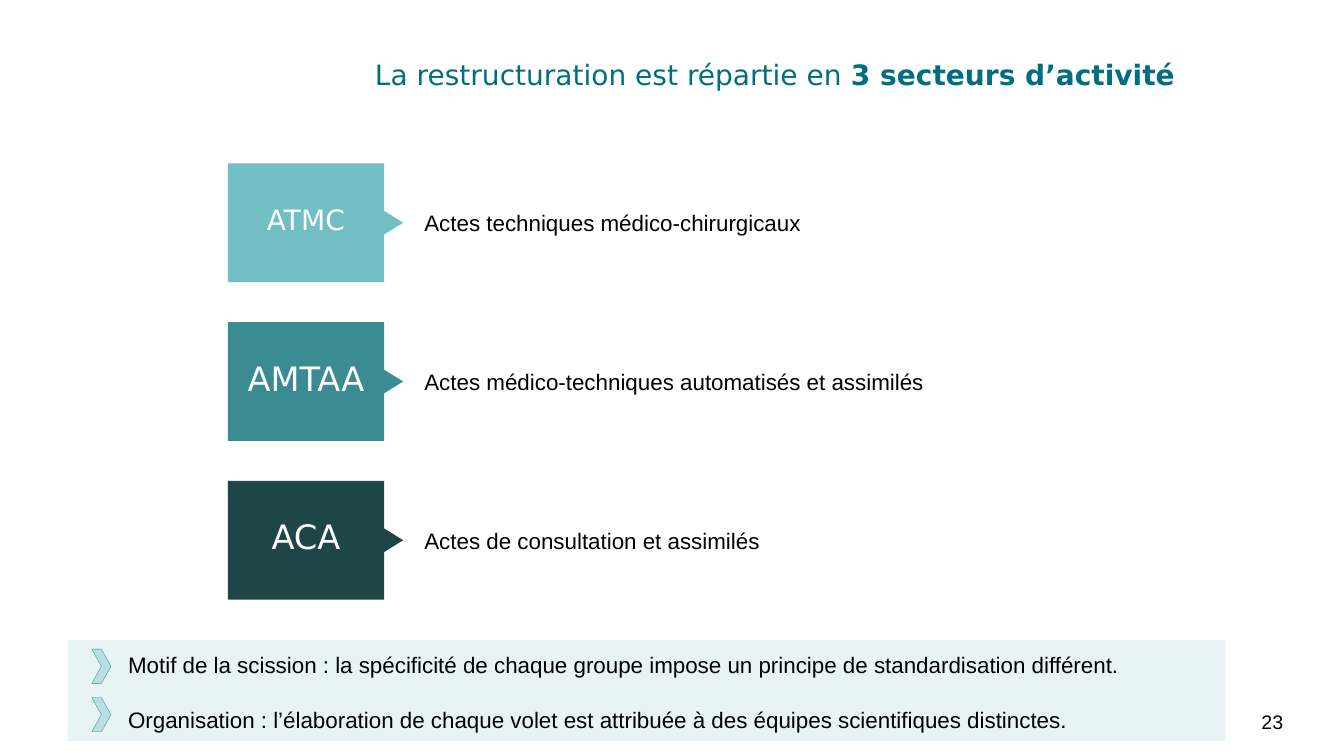
from pptx import Presentation
from pptx.dml.color import RGBColor
from pptx.enum.shapes import MSO_SHAPE
from pptx.enum.text import MSO_ANCHOR, PP_ALIGN
from pptx.util import Inches, Pt

TITLE_TEAL = RGBColor(0x00, 0x6E, 0x82)
LIGHT_TEAL = RGBColor(0x71, 0xBE, 0xC5)
MID_TEAL = RGBColor(0x3B, 0x8B, 0x92)
DARK_TEAL = RGBColor(0x1E, 0x46, 0x48)
PALE_TEAL = RGBColor(0xE7, 0xF3, 0xF4)
CHEVRON_TEAL = RGBColor(0xBA, 0xDF, 0xE2)
BLACK = RGBColor(0x00, 0x00, 0x00)
WHITE = RGBColor(0xFF, 0xFF, 0xFF)

deck = Presentation()
deck.slide_width, deck.slide_height = Inches(13.33), Inches(7.5)
COL, ROW = deck.slide_width / 100, deck.slide_height / 100
slide = deck.slides.add_slide(deck.slide_layouts[6])
shapes = slide.shapes


def block(left, top, width, height, fill=None, preset=MSO_SHAPE.RECTANGLE):
    box = [int(left * COL), int(top * ROW), int(width * COL), int(height * ROW)]
    if fill is None:
        return shapes.add_textbox(*box)
    shape = shapes.add_shape(preset, *box)
    shape.shadow.inherit = False
    shape.fill.solid()
    shape.fill.fore_color.rgb = fill
    shape.line.fill.background()
    return shape


def write(shape, paragraphs, face, size, color, align=PP_ALIGN.LEFT, gap=0, **frame_format):
    frame = shape.text_frame
    layout = dict(word_wrap=True, vertical_anchor=MSO_ANCHOR.MIDDLE, margin_left=0,
                  margin_right=0, margin_top=0, margin_bottom=0)
    for attribute, value in {**layout, **frame_format}.items():
        setattr(frame, attribute, value)
    for index, runs in enumerate(paragraphs):
        paragraph = frame.add_paragraph() if index else frame.paragraphs[0]
        paragraph.alignment = align
        if index:
            paragraph.space_before = Pt(gap)
        for text, bold in runs:
            run = paragraph.add_run()
            run.text = text
            for attribute, value in dict(name=face, size=Pt(size), bold=bold).items():
                setattr(run.font, attribute, value)
            run.font.color.rgb = color


heading = [("La restructuration est répartie en ", False), ("3 secteurs d’activité", True)]
write(block(27.9, 4.8, 64, 10.13), [heading], "DejaVu Sans", 20, TITLE_TEAL)

sectors = [
    ("ATMC", 20, LIGHT_TEAL, "Actes techniques médico-chirurgicaux"),
    ("AMTAA", 24, MID_TEAL, "Actes médico-techniques automatisés et assimilés"),
    ("ACA", 24, DARK_TEAL, "Actes de consultation et assimilés"),
]
TILE_HEIGHT = 15.73
for index, (code, size, color, meaning) in enumerate(sectors):
    top = 21.6 + 21 * index
    middle = top + TILE_HEIGHT / 2
    tile = block(16.95, top, 11.63, TILE_HEIGHT, color)
    write(tile, [[(code, False)]], "DejaVu Sans", size, WHITE, PP_ALIGN.CENTER,
          margin_bottom=int(ROW))

    corners = [(28.36, middle - 1.8), (30, middle), (28.36, middle + 1.8)]
    points = [(int(x * COL), int(y * ROW)) for x, y in corners]
    outline = shapes.build_freeform(*points[0])
    outline.add_line_segments(points[1:], close=True)
    pointer = outline.convert_to_shape()
    pointer.shadow.inherit = False
    pointer.fill.solid()
    pointer.fill.fore_color.rgb = color
    pointer.line.fill.background()

    write(block(31.58, middle - 2, 45, 4), [[(meaning, False)]], "Arial", 16, BLACK)

notes = [
    "Motif de la scission : la spécificité de chaque groupe impose un principe de "
    "standardisation différent.",
    "Organisation : l’élaboration de chaque volet est attribuée à des équipes "
    "scientifiques distinctes.",
]
band = block(5.03, 84.67, 86.12, 13.33, PALE_TEAL)
write(band, [[(note, False)] for note in notes], "Arial", 16, BLACK, gap=20,
      vertical_anchor=MSO_ANCHOR.TOP, margin_left=int(4.5 * COL), margin_top=int(1.5 * ROW))

for index in range(len(notes)):
    chevron = block(6.83, 85.87 + 6.4 * index, 1.43, 4.53, CHEVRON_TEAL, MSO_SHAPE.CHEVRON)
    chevron.line.color.rgb = MID_TEAL
    chevron.line.width = Pt(0.25)

write(block(93.85, 93.75, 2.4, 3.5), [[("23", False)]], "Arial", 14, BLACK)

deck.save("out.pptx")
